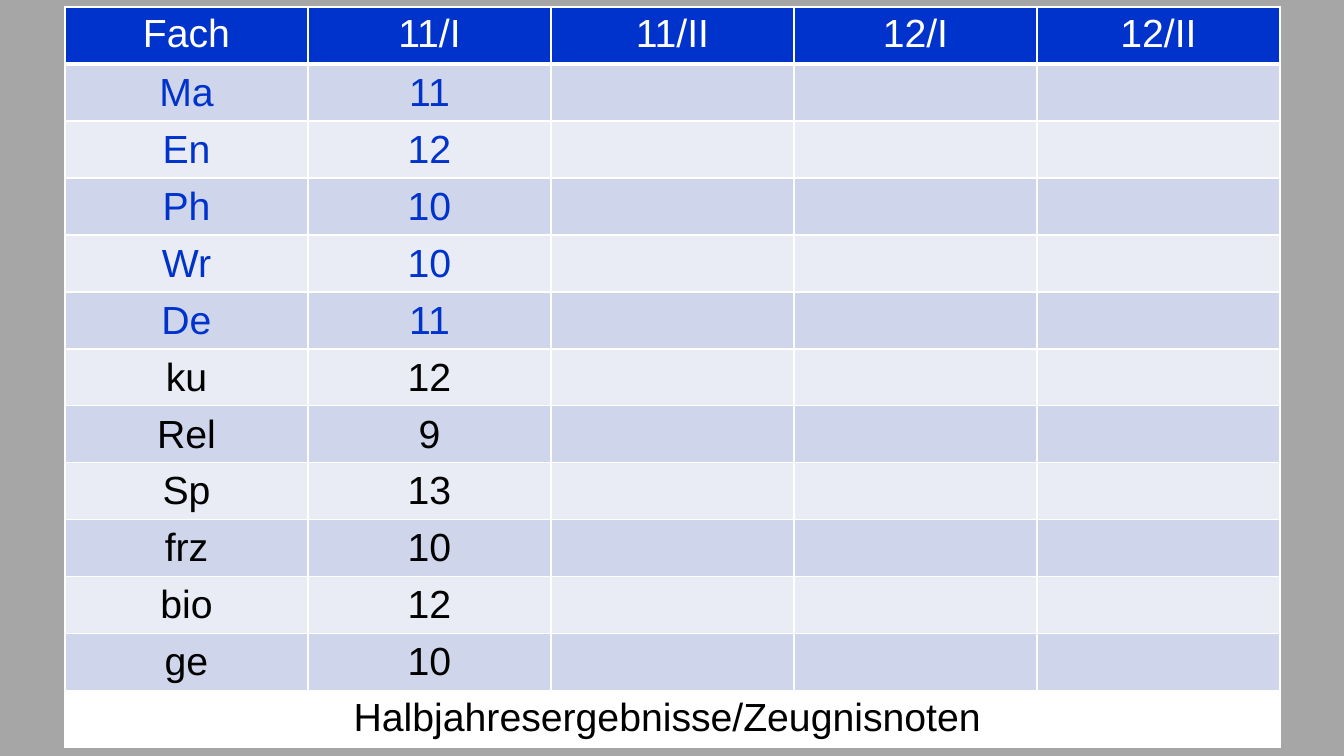
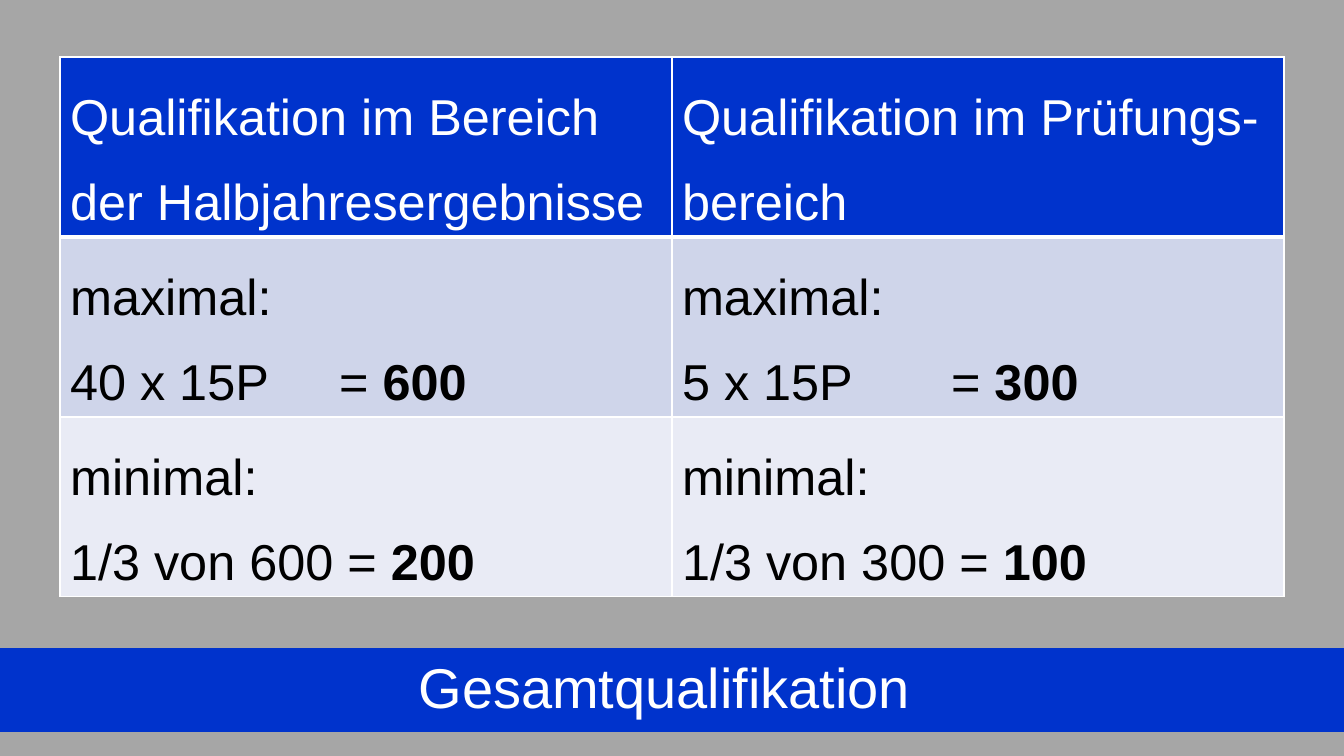
"""Build two slides on half-year results and the overall qualification."""
from dataclasses import dataclass

from lxml.etree import SubElement
from pptx import Presentation
from pptx.dml.color import RGBColor
from pptx.enum.text import MSO_ANCHOR, MSO_AUTO_SIZE, PP_ALIGN
from pptx.oxml.ns import qn
from pptx.util import Emu, Pt


@dataclass(frozen=True)
class Theme:
    font: str = "Arial"
    background: RGBColor = RGBColor(0xA6, 0xA6, 0xA6)
    blue: RGBColor = RGBColor(0x00, 0x33, 0xCC)
    dark_band: RGBColor = RGBColor(0xCF, 0xD5, 0xEA)
    light_band: RGBColor = RGBColor(0xE9, 0xEB, 0xF5)
    white: RGBColor = RGBColor(0xFF, 0xFF, 0xFF)
    black: RGBColor = RGBColor(0x00, 0x00, 0x00)
    title_size: int = 40
    qualification_size: int = 36
    grade_size: int = 28
    thin: int = 1
    thick: int = 3


THEME = Theme()


def px(count):
    return Emu(round(count * 914400 / 100.8))


def write(frame, text, size, color, align=PP_ALIGN.LEFT, spacing=1.0, tab=None):
    paragraph = frame.paragraphs[0]
    paragraph.alignment = align
    paragraph.line_spacing = spacing
    if tab:
        tab_list = SubElement(paragraph._p.get_or_add_pPr(), qn("a:tabLst"))
        SubElement(tab_list, qn("a:tab"), pos=str(px(tab)), algn="l")
    for line_number, line in enumerate(text.split("\n")):
        if line_number:
            paragraph.add_line_break()
        for part_number, part in enumerate(line.split("**")):
            if part:
                run = paragraph.add_run()
                run.text = part
                run.font.name = THEME.font
                run.font.size = Pt(size)
                run.font.bold = part_number % 2 == 1
                run.font.color.rgb = color


presentation = Presentation()
presentation.slide_width, presentation.slide_height = px(1344), px(756)
master_fill = presentation.slide_master.background.fill
master_fill.solid()
master_fill.fore_color.rgb = THEME.background

grades_slide = presentation.slides.add_slide(presentation.slide_layouts[6])
qualification_slide = presentation.slides.add_slide(presentation.slide_layouts[5])

subject_grades = [
    ("Ma", "11"), ("En", "12"), ("Ph", "10"), ("Wr", "10"), ("De", "11"), ("ku", "12"),
    ("Rel", "9"), ("Sp", "13"), ("frz", "10"), ("bio", "12"), ("ge", "10"),
]
exam_subjects = {"Ma", "En", "Ph", "Wr", "De"}
grade_rows = [
    ("Fach", "11/I", "11/II", "12/I", "12/II"),
    *[(subject, grade, "", "", "") for subject, grade in subject_grades],
    ("Halbjahresergebnisse/Zeugnisnoten ", "", "", "", ""),
]
qualification_rows = [
    ("Qualifikation im Bereich der Halbjahresergebnisse", "Qualifikation im Prüfungs-bereich"),
    ("maximal:\n40 x 15P\t= **600**", "maximal:\n5 x 15P\t= **300**"),
    ("minimal:\n1/3 von 600 = **200**", "minimal:\n1/3 von 300 = **100**"),
]
grade_format = dict(size=THEME.grade_size, align=PP_ALIGN.CENTER)
qualification_format = dict(size=THEME.qualification_size, spacing=1.5, tab=269)

for slide, rows, left, top, column_width, row_height, text_format in (
    (grades_slide, grade_rows, 65, 7, 243, 57, grade_format),
    (qualification_slide, qualification_rows, 60, 57, 612, 180, qualification_format),
):
    column_count = len(rows[0])
    table = slide.shapes.add_table(
        len(rows), column_count, px(left), px(top),
        px(column_width * column_count), px(row_height * len(rows)),
    ).table
    for column in table.columns:
        column.width = px(column_width)
    for row_number, row in enumerate(rows):
        table.rows[row_number].height = px(row_height)
        is_header = row_number == 0
        is_caption = rows is grade_rows and row_number == len(rows) - 1
        if is_header:
            fill, color = THEME.blue, THEME.white
        elif is_caption:
            fill, color = THEME.white, THEME.black
        else:
            fill = THEME.dark_band if row_number % 2 else THEME.light_band
            color = THEME.blue if row[0] in exam_subjects else THEME.black
        edges = {
            "a:lnL": THEME.thin,
            "a:lnR": THEME.thin,
            "a:lnT": THEME.thick if row_number == 1 else THEME.thin,
            "a:lnB": THEME.thick if is_header else THEME.thin,
        }
        for column_number, text in enumerate(row):
            cell = table.cell(row_number, column_number)
            if rows is grade_rows and not is_header and not is_caption:
                cell.vertical_anchor = MSO_ANCHOR.MIDDLE
            properties = cell._tc.get_or_add_tcPr()
            for edge, width in edges.items():
                line = SubElement(properties, qn(edge), w=str(Pt(width)))
                line_fill = SubElement(line, qn("a:solidFill"))
                SubElement(line_fill, qn("a:srgbClr"), val=str(THEME.white))
            cell.fill.solid()
            cell.fill.fore_color.rgb = fill
            if text:
                write(cell.text_frame, text, color=color, **text_format)
        if is_caption:
            table.cell(row_number, 0).merge(table.cell(row_number, column_count - 1))

title = qualification_slide.shapes.title
title.left, title.top, title.width, title.height = px(0), px(648), px(1344), px(84)
title.fill.solid()
title.fill.fore_color.rgb = THEME.blue
title_frame = title.text_frame
title_frame.word_wrap = True
title_frame.auto_size = MSO_AUTO_SIZE.NONE
title_frame.vertical_anchor = MSO_ANCHOR.TOP
title_frame.margin_left = title_frame.margin_right = px(10)
title_frame.margin_top, title_frame.margin_bottom = px(12), px(5)
write(title_frame, "Gesamtqualifikation ", size=THEME.title_size, color=THEME.white,
      align=PP_ALIGN.CENTER, spacing=0.9)

presentation.save("out.pptx")
